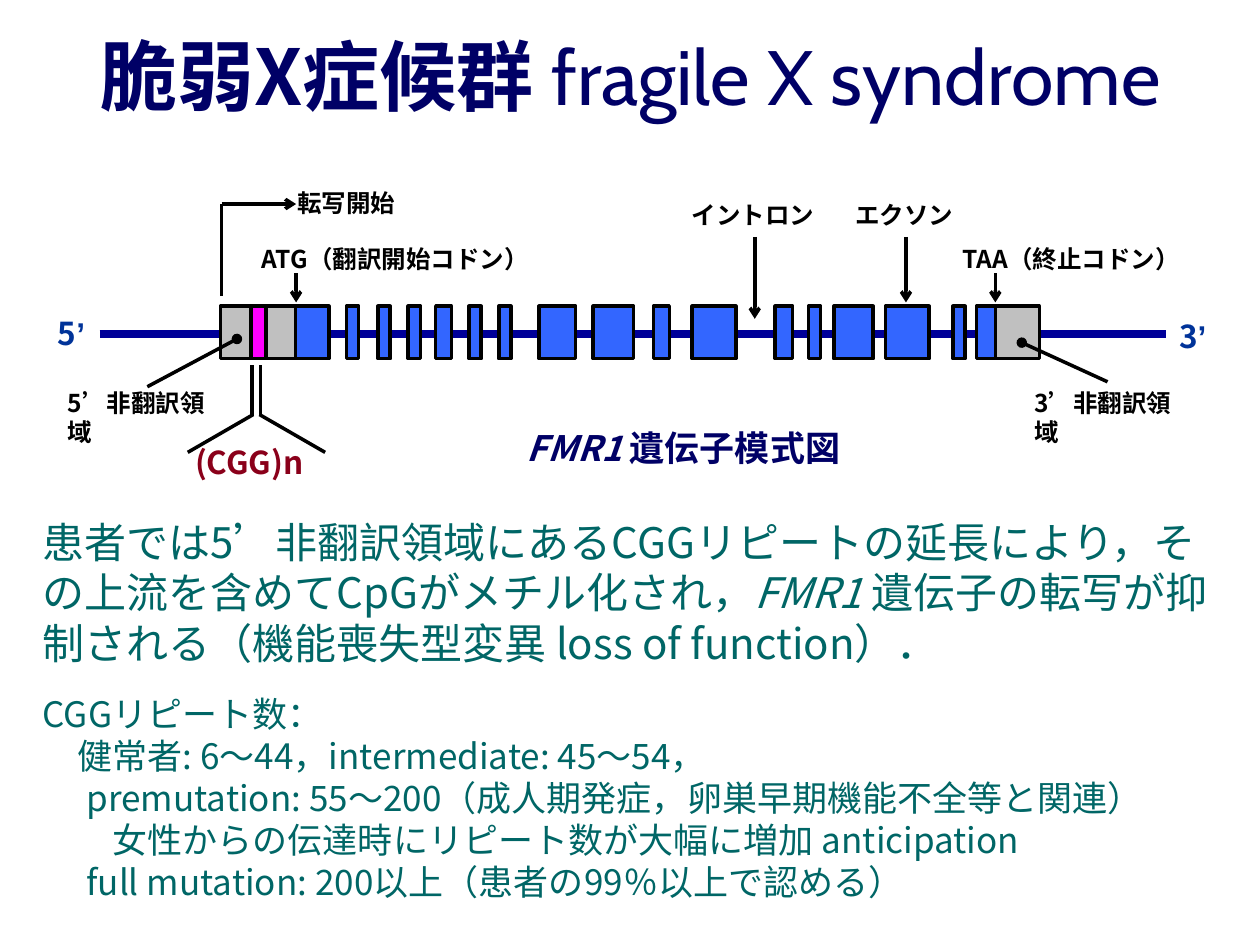
from lxml.etree import SubElement
from pptx import Presentation
from pptx.dml.color import RGBColor
from pptx.enum.shapes import MSO_CONNECTOR, MSO_SHAPE
from pptx.enum.text import MSO_ANCHOR, PP_ALIGN
from pptx.oxml.ns import qn
from pptx.util import Pt

COLORS = {
    "navy": "000066", "gene": "000099", "end": "003399", "exon": "3366FF",
    "utr": "C0C0C0", "repeat": "FF00FF", "cgg": "8A001A", "body": "006666",
    "black": "000000",
}
CJK = "Noto Sans CJK JP"
GENE_TOP, GENE_HIGH = 175, 30
EXONS = [  # left, width
    (168, 20), (198, 7), (216, 7), (233.3, 7), (249, 9), (268, 7),
    (285, 7), (308, 21), (339, 23), (373.5, 9), (395.5, 25), (443, 10),
    (462, 7), (476.5, 22.5), (506, 25), (544.5, 7), (558, 11),
]
OTHERS = [(126, 17.3, "utr"), (143.3, 8.7, "repeat"), (152, 17, "utr"), (569, 25, "utr")]
LABELS = [  # text, left, top, width, size, color
    ("転写開始", 162.7, 103.7, 76, 14, "black"),
    ("ATG（翻訳開始コドン）", 142.6, 136.1, 180, 14, "black"),
    ("TAA（終止コドン）", 542.9, 136.1, 150, 14, "black"),
    ("エクソン", 481.7, 110.9, 76, 14, "black"),
    ("イントロン", 388.1, 110.9, 90, 14, "black"),
    ("5’非翻訳領域", 31.7, 218.2, 97, 14, "black"),
    ("3’非翻訳領域", 583.9, 218.2, 97, 14, "black"),
    ("5’", 25.9, 175.7, 34, 18, "end"),
    ("3’", 666.7, 177.8, 34, 18, "end"),
    ("(CGG)n", 104.4, 249.8, 86, 18, "cgg"),
]
ARROWS = [  # start, tip
    (126.7, 116.6, 169.2, 116.6), (169.2, 156.2, 169.2, 172.8),
    (568.8, 156.2, 568.8, 172.8), (431.3, 135.4, 431.3, 182.2),
    (517.7, 135.4, 517.7, 172.8),
]
DOTS = [(84.2, 221, 135.4, 193.7), (632.9, 218.2, 583.9, 195.8)]
LINES = [
    (126.7, 169.2, 126.7, 116.6), (144, 237.6, 144, 208.8),
    (149, 237.6, 149, 208.8), (107.3, 258.5, 144.7, 236.9),
    (148.3, 236.9, 185.8, 258.5),
]
COUNTS = [  # text, indent
    ("CGGリピート数：", 0),
    ("健常者: 6～44，intermediate: 45～54，", 20),
    ("premutation: 55～200（成人期発症，卵巣早期機能不全等と関連）", 25),
    ("女性からの伝達時にリピート数が大幅に増加 anticipation", 40),
    ("full mutation: 200以上（患者の99％以上で認める）", 25),
]


def rgb(name):
    return RGBColor.from_string(COLORS[name])


def add_box(slide, left, width, fill):
    """Draw one segment of the gene."""
    box = slide.shapes.add_shape(
        MSO_SHAPE.RECTANGLE, Pt(left), Pt(GENE_TOP), Pt(width), Pt(GENE_HIGH))
    box.shadow.inherit = False
    box.fill.solid()
    box.fill.fore_color.rgb = rgb(fill)
    box.line.color.rgb = rgb("black")
    box.line.width = Pt(2)


def add_line(slide, ends, color="black", width=2, tip=None):
    line = slide.shapes.add_connector(MSO_CONNECTOR.STRAIGHT, *map(Pt, ends))
    line.line.color.rgb = rgb(color)
    line.line.width = Pt(width)
    if tip:
        SubElement(line.line._get_or_add_ln(), qn("a:tailEnd"), type=tip)
    SubElement(line._element.spPr, qn("a:effectLst"))


def add_frame(slide, left, top, width, height, anchor=MSO_ANCHOR.TOP):
    box = slide.shapes.add_textbox(Pt(left), Pt(top), Pt(width), Pt(height))
    frame = box.text_frame
    frame.word_wrap = True
    frame.vertical_anchor = anchor
    return frame


def set_font(para, size, color, bold=False):
    font = para.font
    font.size = Pt(size)
    font.bold = bold
    font.color.rgb = rgb(color)
    font.name = CJK
    SubElement(font._element, qn("a:ea"), typeface=CJK)


def add_run(para, text, face=CJK):
    run = para.add_run()
    run.text = text
    run.font.name = face
    SubElement(run.font._element, qn("a:ea"), typeface=CJK)
    return run


def add_text(para, text):
    """Add text with each prime mark set in Arial."""
    head, mark, rest = text.partition("’")
    for part, face in ((head, CJK), (mark, "Arial"), (rest, CJK)):
        if part:
            add_run(para, part, face)


def add_label(slide, text, left, top, width, size, color):
    height = 24 if size == 14 else 29
    para = add_frame(slide, left, top, width, height).paragraphs[0]
    set_font(para, size, color, True)
    add_text(para, text)


def add_title(slide):
    frame = add_frame(slide, 20.2, 14.4, 680.4, 56.9, MSO_ANCHOR.MIDDLE)
    para = frame.paragraphs[0]
    para.alignment = PP_ALIGN.CENTER
    set_font(para, 44, "navy", True)
    add_run(para, "脆弱X症候群 ")
    add_run(para, "fragile X syndrome", "Cabin").font.bold = False


def add_caption(slide):
    frame = add_frame(slide, 234, 241.9, 313.2, 28.1, MSO_ANCHOR.MIDDLE)
    para = frame.paragraphs[0]
    para.alignment = PP_ALIGN.CENTER
    set_font(para, 20, "navy", True)
    add_run(para, "FMR1 ").font.italic = True
    add_run(para, "遺伝子模式図")


def add_body(slide):
    frame = add_frame(slide, 17.3, 291.6, 688.3, 227.5)
    para = frame.paragraphs[0]
    set_font(para, 24, "body")
    add_text(para, "患者では5’非翻訳領域にあるCGGリピートの延長により，"
                   "その上流を含めてCpGがメチル化され，")
    add_run(para, "FMR1 ").font.italic = True
    add_run(para, "遺伝子の転写が抑制される（機能喪失型変異 loss of function）．")
    for text, indent in COUNTS:
        para = frame.add_paragraph()
        set_font(para, 20, "body")
        para._p.get_or_add_pPr().set("marL", str(Pt(indent)))
        if not indent:
            para.space_before = Pt(14)
        add_run(para, text)


def add_gene(slide):
    add_line(slide, (56.9, 190.8, 666, 190.8), "gene", 5)
    for left, width in EXONS:
        add_box(slide, left, width, "exon")
    for left, width, fill in OTHERS:
        add_box(slide, left, width, fill)


def main():
    deck = Presentation()
    deck.slide_width, deck.slide_height = Pt(720), Pt(540)
    slide = deck.slides.add_slide(deck.slide_layouts[6])
    add_title(slide)
    add_gene(slide)
    for label in LABELS:
        add_label(slide, *label)
    for tip, group in (("arrow", ARROWS), ("oval", DOTS), (None, LINES)):
        for ends in group:
            add_line(slide, ends, tip=tip)
    add_body(slide)
    add_caption(slide)
    deck.save("out.pptx")


if __name__ == "__main__":
    main()
